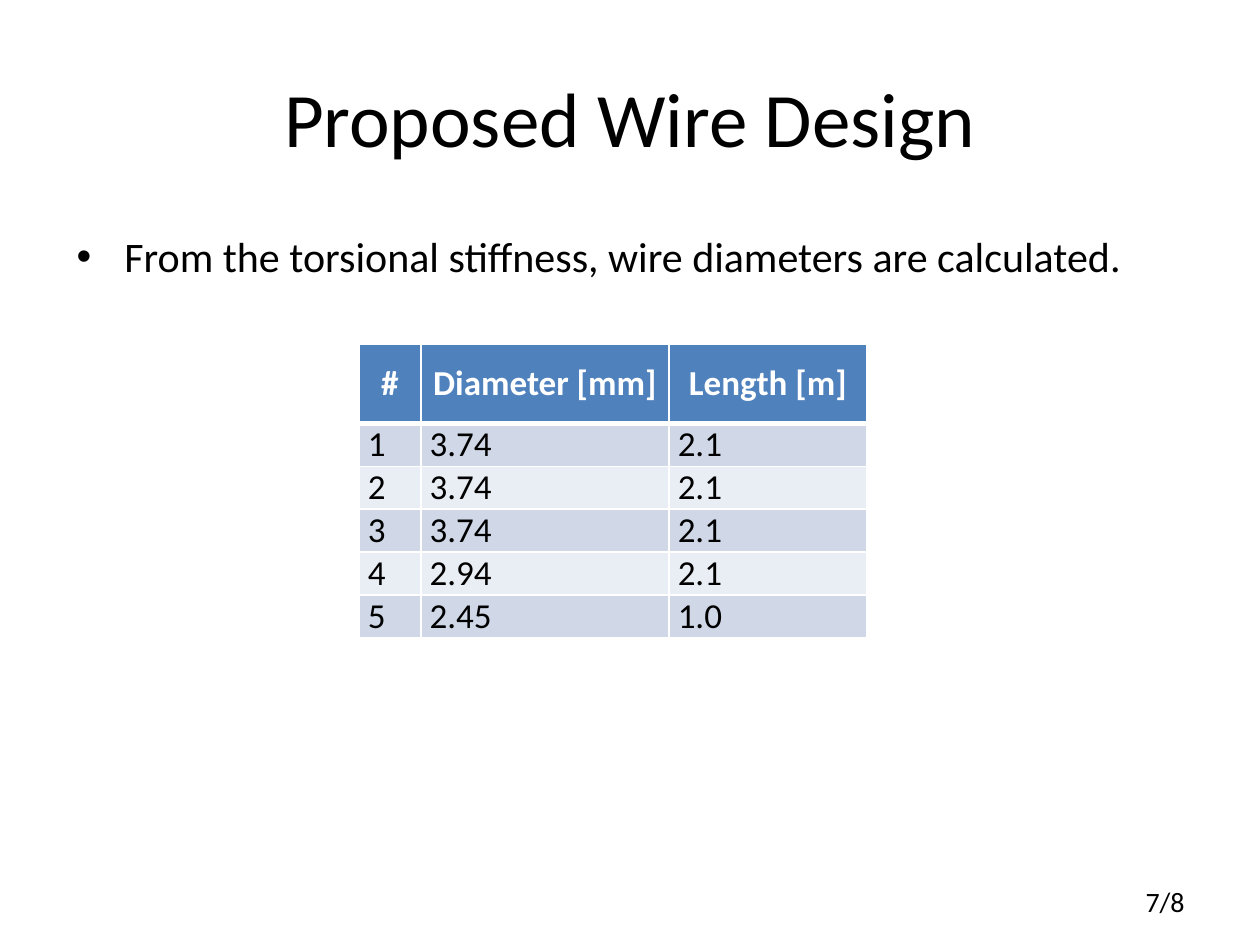
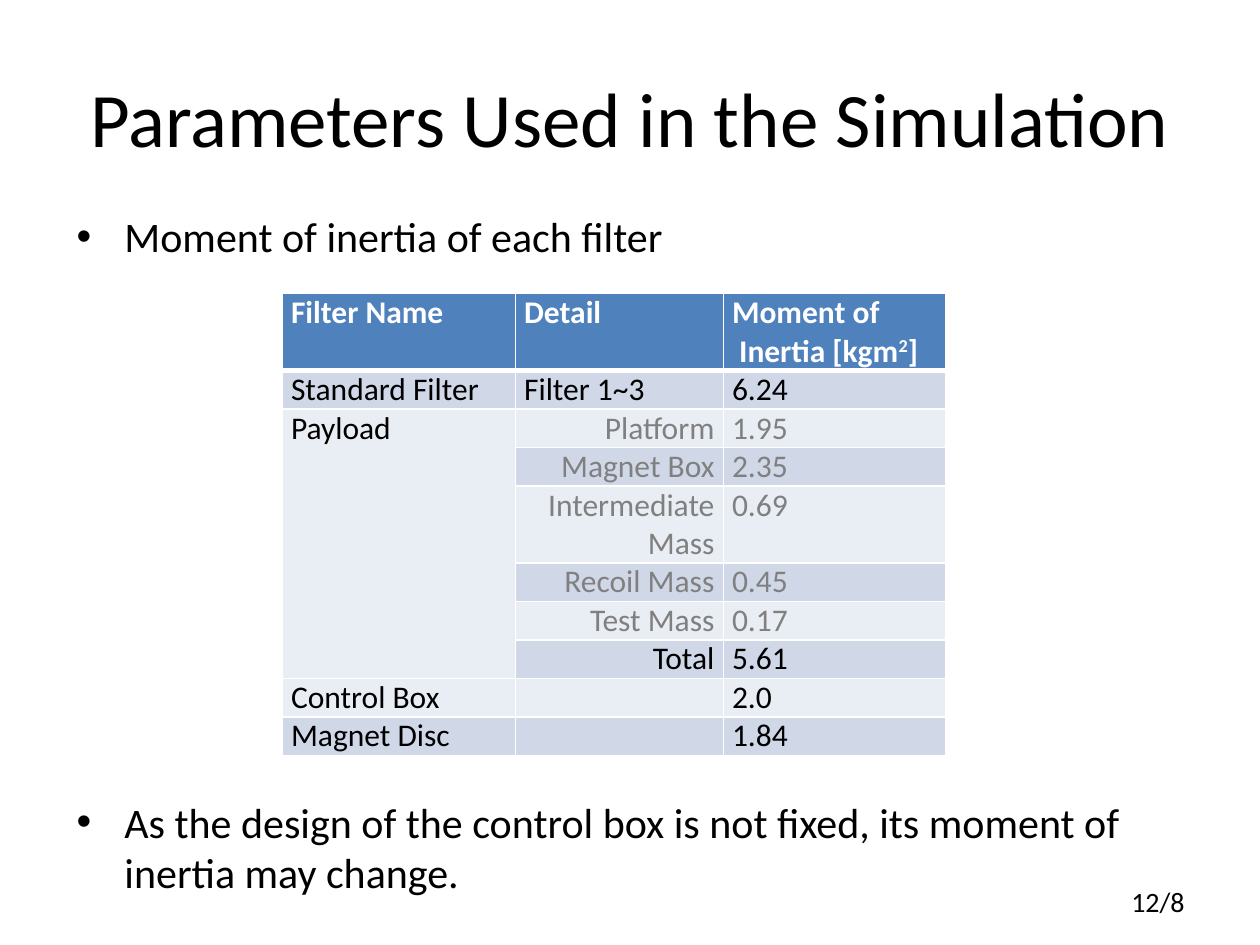
from dataclasses import dataclass
from typing import NamedTuple

from lxml import etree
from pptx import Presentation
from pptx import util as u
from pptx.dml import color
from pptx.enum import text as t
from pptx.oxml import ns

EMU_PER_PX = 9144
CENTER, RIGHT, JUSTIFY = t.PP_ALIGN.CENTER, t.PP_ALIGN.RIGHT, t.PP_ALIGN.JUSTIFY
TOP, MIDDLE = t.MSO_ANCHOR.TOP, t.MSO_ANCHOR.MIDDLE


@dataclass(frozen=True)
class Theme:
    """Colours, font and type sizes shared by the slides."""

    font: str = "Calibri"
    ink: str = "000000"
    muted: str = "808080"
    white: str = "FFFFFF"
    header: str = "4F81BD"
    bands: tuple[str, str] = ("E9EDF4", "D0D8E8")
    title_size: int = 44
    bullet_size: int = 24
    number_size: int = 16


class Box(NamedTuple):
    """A place on the slide in px, 100 to the inch."""

    left: int
    top: int
    width: int
    height: int


class Row(NamedTuple):
    """One table row with its height and format."""

    cells: tuple[str, ...]
    height: int
    colour: str
    detail_align: t.PP_ALIGN = JUSTIFY


class Bullet(NamedTuple):
    """A bulleted statement and its vertical place."""

    text: str
    top: int
    height: int


@dataclass(frozen=True)
class TableSpec:
    """A banded table with a header row."""

    left: int
    top: int
    columns: tuple[int, ...]
    rows: list[Row]
    size: int
    header_align: t.PP_ALIGN = JUSTIFY
    header_anchor: t.MSO_ANCHOR = TOP
    merge: tuple[int, int] | None = None


@dataclass(frozen=True)
class SlideSpec:
    """The content of one slide."""

    title: str
    number: str
    bullets: list[Bullet]
    table: TableSpec


THEME = Theme()
TITLE_BOX = Box(50, 30, 900, 125)
NUMBER_BOX = Box(717, 695, 233, 40)
BULLET_LEFT, BULLET_WIDTH, BULLET_INDENT = 51, 874, 38
CELL_INSET = 7


def px(value: int) -> u.Emu:
    """Turn px into EMU."""
    return u.Emu(value * EMU_PER_PX)


def add_xml(parent, tag: str, **attributes: str):
    """Append a drawing element to a parent."""
    return etree.SubElement(parent, ns.qn(tag), attributes)


def add_bullet_mark(paragraph) -> None:
    """Give a paragraph a round bullet and a hanging indent."""
    paragraph.space_before = u.Pt(5)
    properties = paragraph._p.get_or_add_pPr()
    properties.set("marL", str(px(BULLET_INDENT)))
    properties.set("indent", str(-px(BULLET_INDENT)))
    add_xml(properties, "a:buFont", typeface="Arial")
    add_xml(properties, "a:buChar", char="•")


def write(frame, content: str, *, size: int, colour: str = THEME.ink, bold: bool = False,
          align: t.PP_ALIGN | None = None, anchor: t.MSO_ANCHOR = TOP,
          bullet: bool = False) -> None:
    """Write lines into a frame; carets enclose superscripts."""
    frame.word_wrap = True
    frame.vertical_anchor = anchor
    for index, line in enumerate(content.split("\n")):
        paragraph = frame.add_paragraph() if index else frame.paragraphs[0]
        paragraph.alignment = align
        if bullet:
            add_bullet_mark(paragraph)
        for part, piece in enumerate(line.split("^")):
            run = paragraph.add_run()
            run.text = piece
            run.font.name = THEME.font
            run.font.size = u.Pt(size)
            run.font.bold = bold
            run.font.color.rgb = color.RGBColor.from_string(colour)
            if part % 2:
                run._r.get_or_add_rPr().set("baseline", "30000")


def add_text(slide, box: Box, content: str, **text_format) -> None:
    """Add a text box with formatted text."""
    shape = slide.shapes.add_textbox(*map(px, box))
    write(shape.text_frame, content, **text_format)


def format_cell(cell, row_index: int) -> None:
    """Set the insets, borders and band fill of a cell."""
    cell.margin_left = cell.margin_right = px(CELL_INSET)
    cell.margin_top = cell.margin_bottom = 0
    widths = {"L": 1, "R": 1, "T": 3 if row_index == 1 else 1, "B": 1 if row_index else 3}
    properties = cell._tc.get_or_add_tcPr()
    for side, width in widths.items():
        line = add_xml(properties, f"a:ln{side}", w=str(u.Pt(width)))
        add_xml(add_xml(line, "a:solidFill"), "a:srgbClr", val=THEME.white)
    fill = THEME.bands[row_index % 2] if row_index else THEME.header
    cell.fill.solid()
    cell.fill.fore_color.rgb = color.RGBColor.from_string(fill)


def add_table(slide, spec: TableSpec) -> None:
    """Draw a banded table."""
    box = Box(spec.left, spec.top, sum(spec.columns), sum(row.height for row in spec.rows))
    table = slide.shapes.add_table(len(spec.rows), len(spec.columns), *map(px, box)).table
    table.horz_banding = False
    for column, width in zip(table.columns, spec.columns):
        column.width = px(width)
    for row_index, row in enumerate(spec.rows):
        table.rows[row_index].height = px(row.height)
        is_header = row_index == 0
        for column_index, content in enumerate(row.cells):
            cell = table.cell(row_index, column_index)
            format_cell(cell, row_index)
            if not content:
                continue
            align = row.detail_align if column_index == 1 else JUSTIFY
            write(cell.text_frame, content, size=spec.size, bold=is_header,
                  colour=THEME.ink if column_index == 0 and not is_header else row.colour,
                  align=spec.header_align if is_header else align)
            cell.vertical_anchor = spec.header_anchor if is_header else TOP
    if spec.merge:
        first, last = spec.merge
        table.cell(first, 0).merge(table.cell(last, 0))


def add_slide(presentation, spec: SlideSpec) -> None:
    """Build a slide with title, number, bullets and table."""
    slide = presentation.slides.add_slide(presentation.slide_layouts[5])
    title = slide.shapes.title
    title.left, title.top, title.width, title.height = map(px, TITLE_BOX)
    write(title.text_frame, spec.title, size=THEME.title_size, align=CENTER, anchor=MIDDLE)
    add_table(slide, spec.table)
    add_text(slide, NUMBER_BOX, spec.number, size=THEME.number_size, align=RIGHT, anchor=MIDDLE)
    for bullet in spec.bullets:
        add_text(slide, Box(BULLET_LEFT, bullet.top, BULLET_WIDTH, bullet.height),
                 bullet.text, size=THEME.bullet_size, bullet=True)


WIRES = [("1", "3.74", "2.1"), ("2", "3.74", "2.1"), ("3", "3.74", "2.1"),
         ("4", "2.94", "2.1"), ("5", "2.45", "1.0")]
PAYLOAD_PARTS = [("Platform", "1.95", 30), ("Magnet Box", "2.35", 30),
                 ("Intermediate Mass", "0.69", 61), ("Recoil Mass", "0.45", 30),
                 ("Test Mass", "0.17", 30)]

WIRE_TABLE = TableSpec(
    285, 273, (49, 197, 157),
    [Row(("#", "Diameter [mm]", "Length [m]"), 63, THEME.white),
     *(Row(wire, 33, THEME.ink) for wire in WIRES)],
    size=20, header_align=CENTER, header_anchor=MIDDLE)

INERTIA_TABLE = TableSpec(
    224, 233, (185, 165, 177),
    [Row(("Filter Name", "Detail", "Moment of\n Inertia [kgm^2^]"), 61, THEME.white),
     Row(("Standard Filter", "Filter 1~3", "6.24"), 30, THEME.ink),
     *(Row(("" if index else "Payload", part, inertia), height, THEME.muted, RIGHT)
       for index, (part, inertia, height) in enumerate(PAYLOAD_PARTS)),
     Row(("", "Total", "5.61"), 30, THEME.ink, RIGHT),
     Row(("Control Box", "", "2.0"), 30, THEME.ink),
     Row(("Magnet Disc", "", "1.84"), 30, THEME.ink)],
    size=18, merge=(2, 7))

SLIDES = [
    SlideSpec(
        "Proposed Wire Design", "7/8",
        [Bullet("From the torsional stiffness, wire diameters are calculated.", 178, 55)],
        WIRE_TABLE),
    SlideSpec(
        "Parameters Used in the Simulation", "12/8",
        [Bullet("Moment of inertia of each filter", 162, 55),
         Bullet("As the design of the control box is not fixed, "
                "its moment of inertia may change.", 627, 94)],
        INERTIA_TABLE),
]


def main() -> None:
    """Build and save the presentation."""
    presentation = Presentation()
    presentation.slide_width, presentation.slide_height = px(1000), px(750)
    for spec in SLIDES:
        add_slide(presentation, spec)
    presentation.save("out.pptx")


if __name__ == "__main__":
    main()
